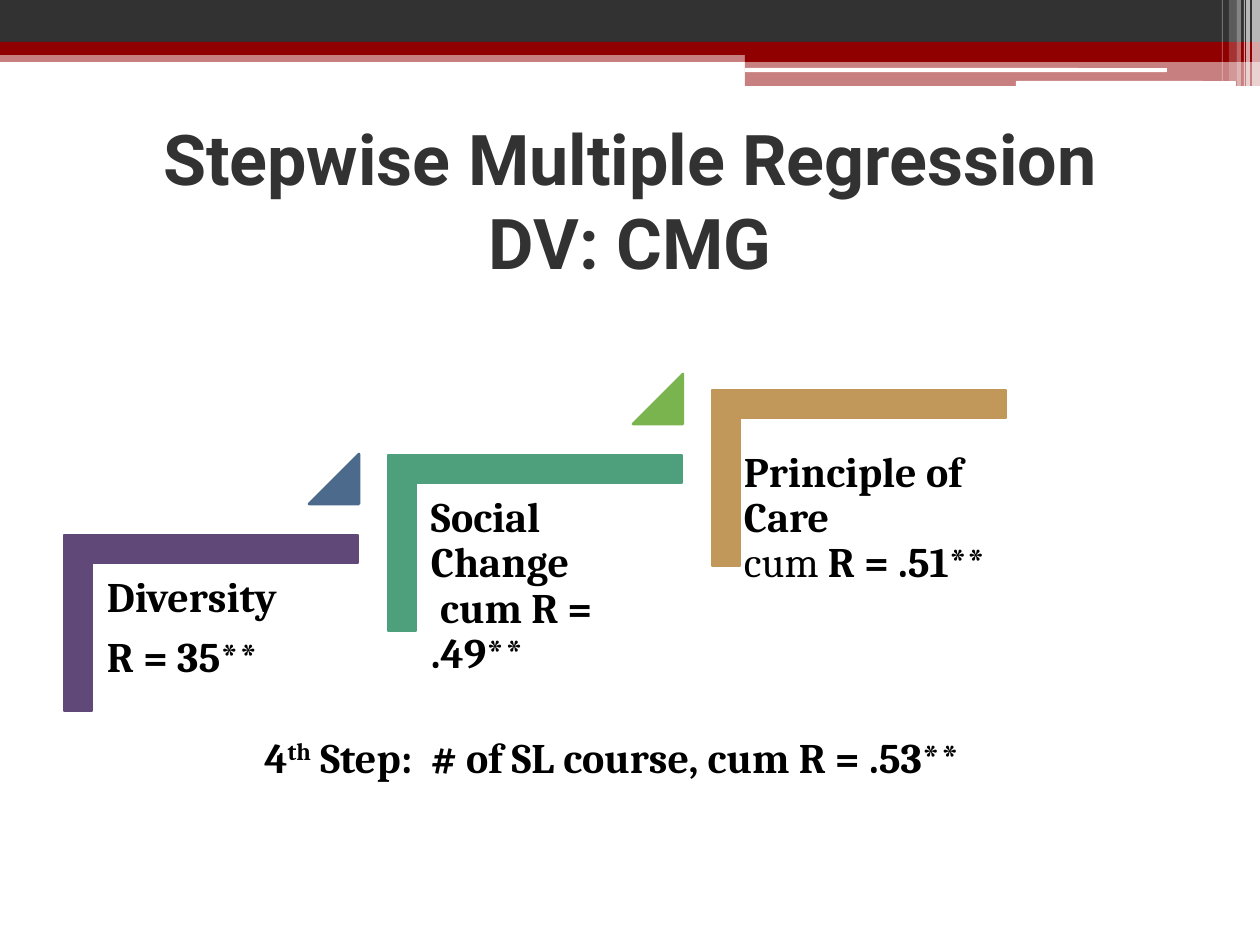
from dataclasses import dataclass

from lxml import etree
from pptx import Presentation, util as u
from pptx.dml.color import RGBColor
from pptx.enum import shapes, text
from pptx.oxml.ns import qn

PX = 914400 / 126


@dataclass(frozen=True)
class Theme:
    dark: str = "323232"
    red: str = "900000"
    white: str = "FFFFFF"
    black: str = "000000"
    purple: str = "604878"
    blue: str = "4B6A8C"
    teal: str = "4DA07B"
    green: str = "7AB44F"
    tan: str = "C19859"
    title_font: str = "Roboto"
    body_font: str = "Cambria"
    title_size: int = 40
    body_size: float = 24


THEME = Theme()
KIND = shapes.MSO_SHAPE

BANDS = [
    (KIND.RECTANGLE, (0, 50, 1260, 12), THEME.red, 50),
    (KIND.RECTANGLE, (0, 0, 1260, 43), THEME.dark, 100),
    (KIND.RECTANGLE, (0, 42, 1260, 13), THEME.red, 100),
    (KIND.RECTANGLE, (745, 49, 515, 13), THEME.red, 100),
    (KIND.RECTANGLE, (745, 61, 515, 25), THEME.red, 50),
    (KIND.ROUNDED_RECTANGLE, (745, 68, 422, 4), THEME.white, 100),
    (KIND.ROUNDED_RECTANGLE, (1016, 81, 220, 5), THEME.white, 100),
]
STRIPES = [
    (1252, 8, 86, 65),
    (1246, 4, 86, 65),
    (1244, 1, 86, 60),
    (1237, 4, 86, 40),
    (1229, 8, 81, 20),
    (1222, 1, 81, 30),
]
STEPS = [
    (476, THEME.purple, THEME.blue, (94, 563, 265, 232),
     [[("Diversity", {})], [("R = 35**", {})]]),
    (396, THEME.teal, THEME.green, (418, 483, 265, 232),
     [[("Social Change\n cum R = .49**", {})]]),
    (331, THEME.tan, None, (731, 438, 290, 200),
     [[("Principle of Care\n", {}), ("cum ", {"bold": False}),
       ("R = .51", {}), ("**", {"bold": False})]]),
]
FIRST_STEP, STEP_GAP = 123, 324
FOURTH_STEP = [[("4", {}), ("th", {"baseline": 30}),
                (" Step:  # of SL course, cum R = .53**", {})]]


def px(*lengths):
    return [u.Emu(round(length * PX)) for length in lengths]


def add_figure(slide, kind, box, color, alpha=100, adjustments=(), outline=0, rotation=0):
    shape = slide.shapes.add_shape(kind, *px(*box))
    shape.shadow.inherit = False
    shape.rotation = rotation
    for index, value in enumerate(adjustments):
        shape.adjustments[index] = value
    shape.fill.solid()
    shape.fill.fore_color.rgb = RGBColor.from_string(color)
    if alpha < 100:
        color_node = shape.fill._xPr.find(qn("a:solidFill"))[0]
        etree.SubElement(color_node, qn("a:alpha")).set("val", str(alpha * 1000))
    if outline:
        shape.line.color.rgb = RGBColor.from_string(color)
        shape.line.width = u.Pt(outline)
    else:
        shape.line.fill.background()


def add_text(paragraph, content, font=THEME.body_font, size=THEME.body_size,
             color=THEME.black, bold=True, baseline=0):
    for index, line in enumerate(content.split("\n")):
        if index:
            paragraph.add_line_break()
        if not line:
            continue
        run = paragraph.add_run()
        run.text = line
        run.font.name = font
        run.font.size = u.Pt(size)
        run.font.bold = bold
        run.font.color.rgb = RGBColor.from_string(color)
        if baseline:
            run._r.get_or_add_rPr().set("baseline", str(baseline * 1000))


def add_text_box(slide, box, paragraphs, spacing=None, after=None, inset=None):
    frame = slide.shapes.add_textbox(*px(*box)).text_frame
    frame.word_wrap = True
    if inset:
        frame.margin_left, frame.margin_top, frame.margin_right, frame.margin_bottom = px(*[inset] * 4)
    for index, runs in enumerate(paragraphs):
        paragraph = frame.add_paragraph() if index else frame.paragraphs[0]
        if spacing:
            paragraph.line_spacing = spacing
        if after:
            paragraph.space_after = u.Pt(after)
        for content, style in runs:
            add_text(paragraph, content, **style)
    return frame


def add_title(slide, content):
    title = slide.shapes.title
    title.left, title.top, title.width, title.height = px(63, 95, 1134, 210)
    frame = title.text_frame
    frame.auto_size = text.MSO_AUTO_SIZE.NONE
    frame.vertical_anchor = text.MSO_ANCHOR.MIDDLE
    paragraph = frame.paragraphs[0]
    paragraph.alignment = text.PP_ALIGN.CENTER
    add_text(paragraph, content, font=THEME.title_font, size=THEME.title_size, color=THEME.dark)


def add_header(slide):
    for kind, box, color, alpha in BANDS:
        add_figure(slide, kind, box, color, alpha)
    for left, width, height, alpha in STRIPES:
        add_figure(slide, KIND.RECTANGLE, (left, 0, width, height), THEME.white, alpha)


def add_step(slide, left, top, color, arrow_color, text_box, paragraphs):
    add_figure(slide, KIND.CORNER, (left, top, 176, 294), color,
               adjustments=(0.16, 0.16), outline=1.5, rotation=90)
    add_text_box(slide, text_box, paragraphs, spacing=0.9,
                 after=0.35 * THEME.body_size, inset=13)
    if arrow_color:
        add_figure(slide, KIND.ISOSCELES_TRIANGLE, (left + 186, top - 22, 50, 50),
                   arrow_color, adjustments=(1,), outline=1.5)


def main():
    presentation = Presentation()
    presentation.slide_width, presentation.slide_height = px(1260, 945)
    slide = presentation.slides.add_slide(presentation.slide_layouts[5])
    add_header(slide)
    add_title(slide, "Stepwise Multiple Regression\nDV: CMG")
    for index, step in enumerate(STEPS):
        add_step(slide, FIRST_STEP + index * STEP_GAP, *step)
    frame = add_text_box(slide, (252, 725, 850, 115), FOURTH_STEP)
    frame.auto_size = text.MSO_AUTO_SIZE.SHAPE_TO_FIT_TEXT
    presentation.save("out.pptx")


if __name__ == "__main__":
    main()
